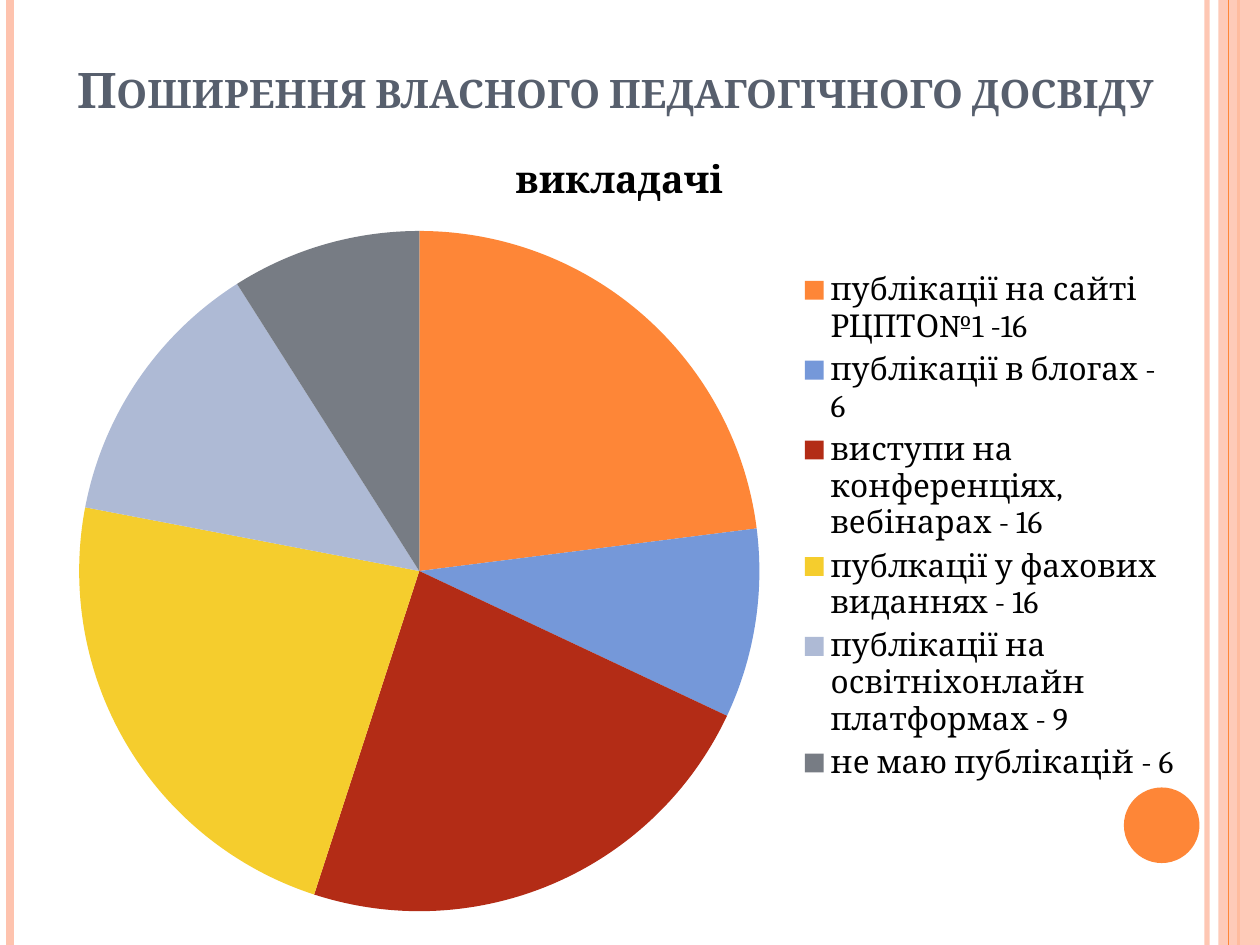
from dataclasses import dataclass

from lxml.etree import SubElement
from pptx import Presentation
from pptx.chart.data import CategoryChartData
from pptx.dml.color import RGBColor
from pptx.enum.chart import XL_CHART_TYPE, XL_LEGEND_POSITION
from pptx.enum.shapes import MSO_CONNECTOR, MSO_SHAPE
from pptx.enum.text import MSO_ANCHOR, MSO_AUTO_SIZE, PP_ALIGN
from pptx.oxml.ns import qn
from pptx.util import Inches, Pt


@dataclass(frozen=True)
class Theme:
    font: str = "Cambria"
    title_size: float = 28
    chart_size: float = 18
    chart_title_size: float = 21.6
    title_color: str = "575F6D"
    text: str = "000000"
    accent: str = "FE8637"
    pale: str = "FEC3AE"
    slices: tuple = ("FE8637", "7598D9", "B32C16", "F5CD2D", "AEBAD5", "777C84")


class SlideBuilder:
    def __init__(self, slide, theme):
        self.slide = slide
        self.theme = theme

    def style_font(self, font, size, color, bold=False):
        font.name = self.theme.font
        font.size = Pt(size)
        font.bold = bold
        font.color.rgb = RGBColor.from_string(color)

    def paint(self, fill, color, opacity=100):
        fill.solid()
        fill.fore_color.rgb = RGBColor.from_string(color)
        if opacity < 100:
            color_element = fill._xPr.find(qn("a:solidFill"))[0]
            SubElement(color_element, qn("a:alpha"), val=str(opacity * 1000))

    def title(self, text, left, top, width, height):
        shape = self.slide.shapes.title
        shape.left, shape.top = Inches(left), Inches(top)
        shape.width, shape.height = Inches(width), Inches(height)
        frame = shape.text_frame
        frame.text = text
        frame.word_wrap = True
        frame.auto_size = MSO_AUTO_SIZE.NONE
        frame.vertical_anchor = MSO_ANCHOR.BOTTOM
        paragraph = frame.paragraphs[0]
        paragraph.alignment = PP_ALIGN.CENTER
        self.style_font(paragraph.font, self.theme.title_size,
                        self.theme.title_color, bold=True)
        paragraph.runs[0]._r.get_or_add_rPr().set("cap", "small")

    def vertical_line(self, x, color, weight, opacity=100):
        connector = self.slide.shapes.add_connector(
            MSO_CONNECTOR.STRAIGHT, Inches(x), 0, Inches(x), Inches(7.5))
        connector.line.width = Pt(weight)
        self.paint(connector.line.fill, color, opacity)
        SubElement(connector._element.spPr, qn("a:effectLst"))

    def shape(self, kind, left, top, width, height, color, opacity=100):
        shape = self.slide.shapes.add_shape(
            kind, Inches(left), Inches(top), Inches(width), Inches(height))
        shape.shadow.inherit = False
        shape.line.fill.background()
        self.paint(shape.fill, color, opacity)

    def pie(self, name, data, left, top, width, height):
        chart_data = CategoryChartData()
        chart_data.categories = [label for label, _ in data]
        chart_data.add_series(name, [value for _, value in data])
        chart = self.slide.shapes.add_chart(
            XL_CHART_TYPE.PIE, Inches(left), Inches(top),
            Inches(width), Inches(height), chart_data).chart
        self.style_font(chart.font, self.theme.chart_size, self.theme.text)

        chart.has_title = True
        chart.chart_title.include_in_layout = False
        frame = chart.chart_title.text_frame
        frame.text = name
        self.style_font(frame.paragraphs[0].font, self.theme.chart_title_size,
                        self.theme.text, bold=True)

        chart.has_legend = True
        chart.legend.position = XL_LEGEND_POSITION.RIGHT
        chart.legend.include_in_layout = False

        plot = chart.plots[0]
        plot.vary_by_categories = True
        for index, color in enumerate(self.theme.slices):
            self.paint(plot.series[0].points[index].format.fill, color)


def main():
    presentation = Presentation()
    presentation.slide_width = Inches(10)
    presentation.slide_height = Inches(7.5)
    theme = Theme()
    slide = presentation.slides.add_slide(presentation.slide_layouts[5])
    builder = SlideBuilder(slide, theme)

    # Side stripes and corner circle
    builder.vertical_line(9.58, theme.pale, 3, opacity=93)
    builder.vertical_line(0.08, theme.pale, 4.5)
    builder.vertical_line(9.83, theme.accent, 1.5)
    builder.shape(MSO_SHAPE.RECTANGLE, 9.67, 0, 0.33, 7.5, theme.pale, opacity=87)
    builder.vertical_line(9.75, theme.accent, 0.75)
    builder.shape(MSO_SHAPE.OVAL, 8.92, 6.25, 0.6, 0.6, theme.accent)

    # Title
    builder.title("Поширення власного педагогічного досвіду", 0.2, 0, 9.37, 0.99)

    # Teachers' publications
    builder.pie("викладачі", [
        ("публікації на сайті РЦПТО№1 -16", 23),
        ("публікації в блогах - 6", 9),
        ("виступи на конференціях, вебінарах - 16", 23),
        ("публкації у фахових виданнях - 16", 23),
        ("публікації на освітніхонлайн платформах - 9", 13),
        ("не маю публікацій - 6", 9),
    ], 0.35, 0.99, 9.13, 6.38)

    presentation.save("out.pptx")


if __name__ == "__main__":
    main()
